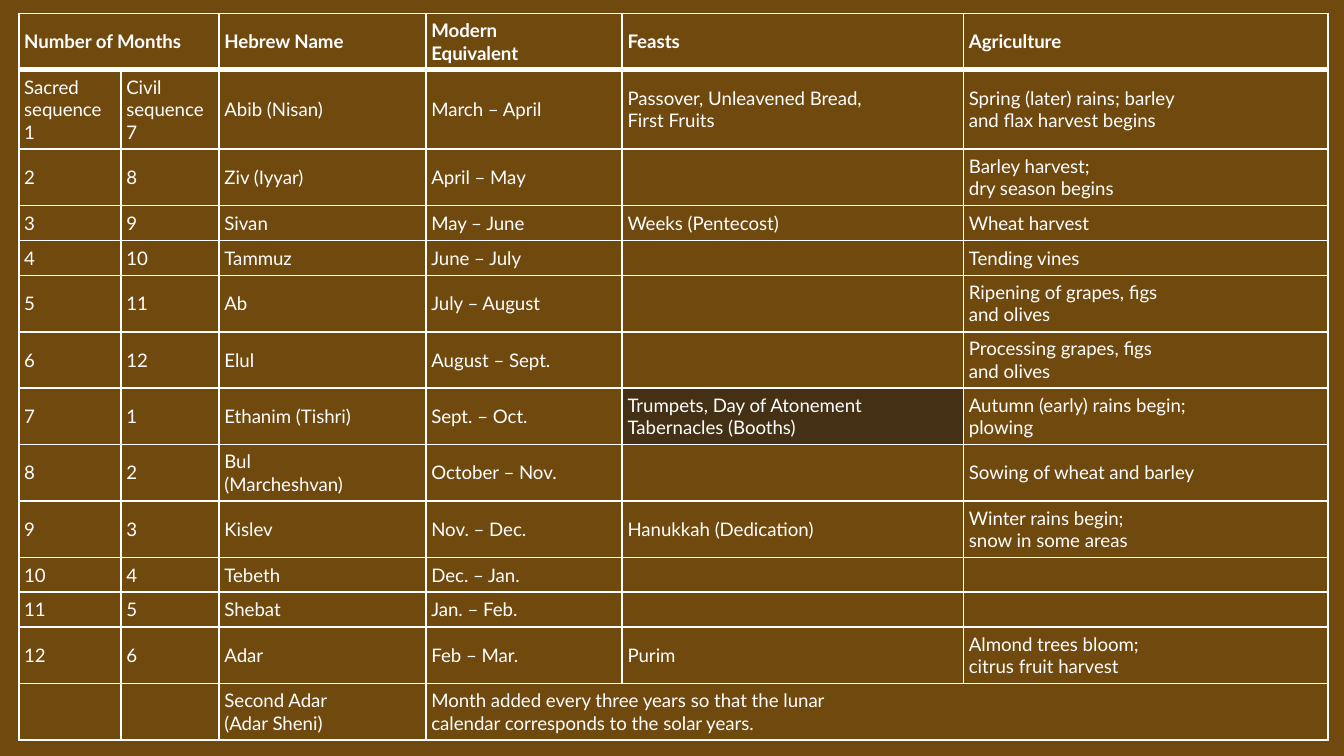
from dataclasses import dataclass

import lxml.etree
import pptx
import pptx.dml.color
import pptx.enum.text
import pptx.oxml.ns
import pptx.table
import pptx.util

Inches = pptx.util.Inches
COLORS = {"background": "70490F", "text": "FFFFFF", "border": "FFFFFF", "highlight": "191919"}
FONT_NAME = "Lato"
FONT_SIZE = 10
CELL_MARGIN = Inches(0.04)
COLUMN_WIDTHS = [0.76, 0.73, 1.54, 1.46, 2.54, 2.71]
HEIGHT_BY_LINES = {1: 0.26, 2: 0.42, 3: 0.59}
SOFT_BREAK = "|"
HIGHLIGHTED_MONTH = 7


@dataclass(frozen=True)
class MonthRow:
    sacred: str
    civil: str
    hebrew: str
    modern: str
    feasts: str = ""
    agriculture: str = ""

    def texts(self) -> list[str]:
        return [self.sacred, self.civil, self.hebrew, self.modern, self.feasts, self.agriculture]

    def height(self) -> float:
        lines = max(1 + text.count(SOFT_BREAK) + text.count("\n") for text in self.texts())
        return HEIGHT_BY_LINES[lines]


ROWS = [
    MonthRow("Number of Months", "", "Hebrew Name", "Modern |Equivalent", "Feasts", "Agriculture"),
    MonthRow("Sacred|sequence\n1", "Civil|sequence\n7", "Abib (Nisan)", "March – April",
             "Passover, Unleavened Bread, |First Fruits",
             "Spring (later) rains; barley |and flax harvest begins"),
    MonthRow("2", "8", "Ziv (Iyyar)", "April – May", "", "Barley harvest; |dry season begins"),
    MonthRow("3", "9", "Sivan", "May – June", "Weeks (Pentecost)", "Wheat harvest"),
    MonthRow("4", "10", "Tammuz", "June – July", "", "Tending vines"),
    MonthRow("5", "11", "Ab", "July – August", "", "Ripening of grapes, figs |and olives"),
    MonthRow("6", "12", "Elul", "August – Sept.", "", "Processing grapes, figs|and olives"),
    MonthRow("7", "1", "Ethanim (Tishri)", "Sept. – Oct.",
             "Trumpets, Day of Atonement\nTabernacles (Booths)",
             "Autumn (early) rains begin;\nplowing"),
    MonthRow("8", "2", "Bul |(Marcheshvan)", "October – Nov.", "", "Sowing of wheat and barley"),
    MonthRow("9", "3", "Kislev", "Nov. – Dec.", "Hanukkah (Dedication)",
             "Winter rains begin; |snow in some areas"),
    MonthRow("10", "4", "Tebeth", "Dec. – Jan."),
    MonthRow("11", "5", "Shebat", "Jan. – Feb."),
    MonthRow("12", "6", "Adar", "Feb – Mar.", "Purim",
             "Almond trees bloom; |citrus fruit harvest"),
    MonthRow("", "", "Second Adar|(Adar Sheni)",
             "Month added every three years so that the lunar"
             "|calendar corresponds to the solar years."),
]


def rgb(name: str) -> pptx.dml.color.RGBColor:
    return pptx.dml.color.RGBColor.from_string(COLORS[name])


def add_element(parent, tag: str, **attributes: str):
    return lxml.etree.SubElement(parent, pptx.oxml.ns.qn(tag), **attributes)


def write_text(cell: pptx.table._Cell, text: str, bold: bool) -> None:
    frame = cell.text_frame
    size = str(FONT_SIZE * 100)
    for index, line in enumerate(text.split("\n")):
        paragraph = frame.add_paragraph() if index else frame.paragraphs[0]
        for part_index, part in enumerate(line.split(SOFT_BREAK)):
            if part_index:
                paragraph.add_line_break()
                add_element(paragraph._p[-1], "a:rPr", sz=size)
            if part:
                run = paragraph.add_run()
                run.text = part
                run.font.name = FONT_NAME
                run.font.size = pptx.util.Pt(FONT_SIZE)
                run.font.bold = bold
                run.font.color.rgb = rgb("text")
        add_element(paragraph._p, "a:endParaRPr", sz=size)


def set_borders(cell: pptx.table._Cell, top: int, bottom: int) -> None:
    properties = cell._tc.get_or_add_tcPr()
    widths = {"a:lnL": 1, "a:lnR": 1, "a:lnT": top, "a:lnB": bottom}
    for position, (tag, width) in enumerate(widths.items()):
        line = add_element(properties, tag, w=str(pptx.util.Pt(width)))
        add_element(add_element(line, "a:solidFill"), "a:srgbClr", val=COLORS["border"])
        properties.insert(position, line)


def highlight(cell: pptx.table._Cell) -> None:
    cell.fill.solid()
    cell.fill.fore_color.rgb = rgb("highlight")
    color = cell._tc.tcPr.find(".//" + pptx.oxml.ns.qn("a:srgbClr"))
    add_element(color, "a:alpha", val="50000")


def draw_cell(table: pptx.table.Table, row: int, column: int, text: str) -> None:
    cell = table.cell(row, column)
    cell.vertical_anchor = pptx.enum.text.MSO_ANCHOR.MIDDLE
    cell.margin_left = cell.margin_right = CELL_MARGIN
    cell.margin_top = cell.margin_bottom = CELL_MARGIN
    write_text(cell, text, bold=row == 0)
    if (row, column) == (HIGHLIGHTED_MONTH, 4):
        highlight(cell)
    else:
        cell.fill.background()
    if not cell.is_spanned:
        set_borders(cell, top=3 if row == 1 else 1, bottom=3 if row == 0 else 1)


def draw_calendar(slide) -> None:
    heights = [row.height() for row in ROWS]
    shape = slide.shapes.add_table(len(ROWS), len(COLUMN_WIDTHS), Inches(0.14), Inches(0.1),
                                   Inches(sum(COLUMN_WIDTHS)), Inches(sum(heights)))
    table = shape.table
    table.first_row = False
    table.horz_banding = False
    for column, width in zip(table.columns, COLUMN_WIDTHS):
        column.width = Inches(width)
    for row, height in zip(table.rows, heights):
        row.height = Inches(height)
    last = len(ROWS) - 1
    table.cell(0, 0).merge(table.cell(0, 1))
    table.cell(last, 3).merge(table.cell(last, 5))
    for row_index, month in enumerate(ROWS):
        for column_index, text in enumerate(month.texts()):
            draw_cell(table, row_index, column_index, text)


def main() -> None:
    presentation = pptx.Presentation()
    presentation.slide_width = Inches(10)
    presentation.slide_height = presentation.slide_width * 9 // 16
    slide = presentation.slides.add_slide(presentation.slide_layouts[6])
    slide.background.fill.solid()
    slide.background.fill.fore_color.rgb = rgb("background")
    draw_calendar(slide)
    presentation.save("out.pptx")


if __name__ == "__main__":
    main()
